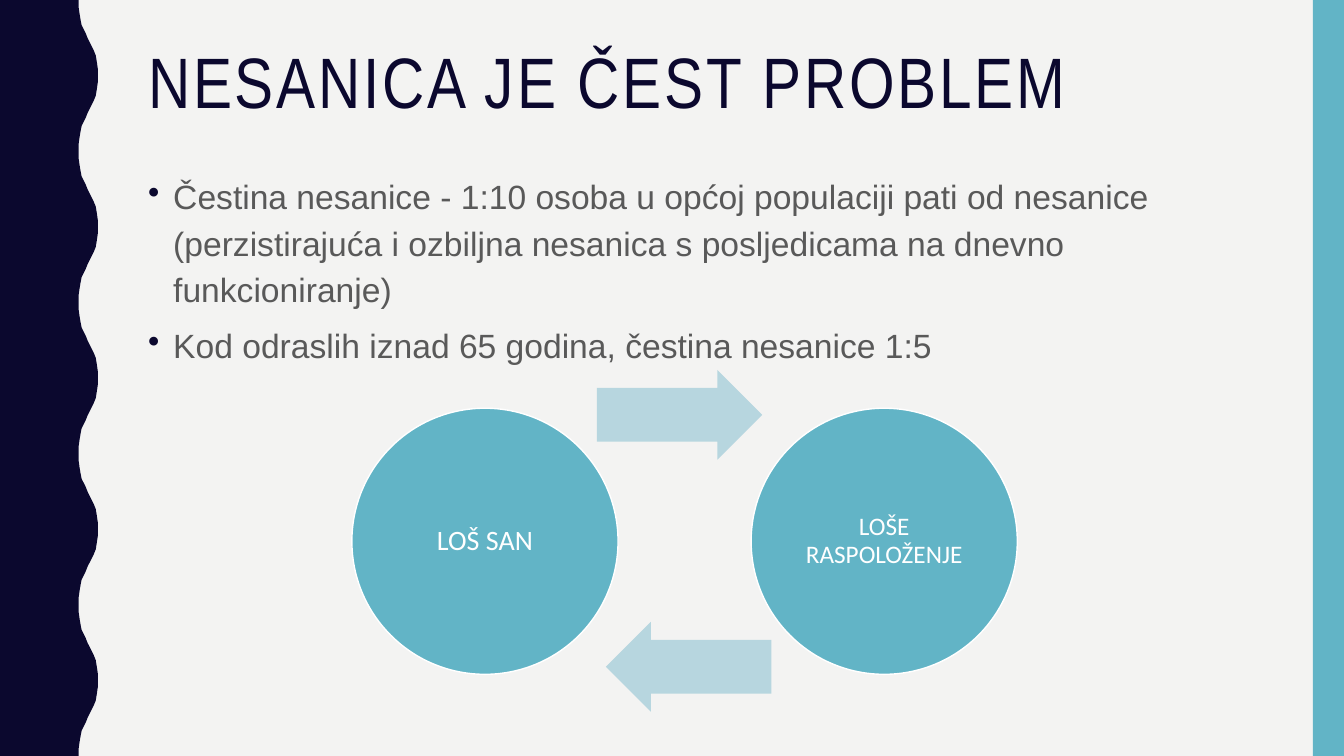
from dataclasses import dataclass

from lxml import etree
from pptx import Presentation, util as u
from pptx.dml.color import RGBColor
from pptx.enum import shapes as sh, text as tx
from pptx.oxml.ns import qn

PX = 9144  # EMU in one px: 100 px to the inch


@dataclass(frozen=True)
class Theme:
    back: str = "F3F3F2"
    navy: str = "0B082E"
    teal: str = "62B4C6"
    pale: str = "B7D6DF"
    gray: str = "595959"
    white: str = "FFFFFF"
    head: int = 51
    body: int = 24
    large: int = 20
    small: int = 18
    title: str = "Arial Narrow"
    sans: str = "Arial"
    label: str = "Calibri"


class Deck:
    def __init__(self, theme, wide, high):
        self.theme = theme
        self.prs = Presentation()
        self.prs.slide_width, self.prs.slide_height = wide * PX, high * PX
        self.slide = self.prs.slides.add_slide(self.prs.slide_layouts[6])
        fill = self.slide.background.fill
        fill.solid()
        fill.fore_color.rgb = RGBColor.from_string(theme.back)

    def paint(self, shape, color, edge=None):
        shape.shadow.inherit = False
        shape.fill.solid()
        shape.fill.fore_color.rgb = RGBColor.from_string(color)
        if edge:
            shape.line.color.rgb = RGBColor.from_string(edge)
            shape.line.width = u.Pt(1)
        else:
            shape.line.fill.background()
        return shape

    def shape(self, kind, box, color, edge=None):
        item = self.slide.shapes.add_shape(kind, *(n * PX for n in box))
        return self.paint(item, color, edge)

    def outline(self, points, color):
        form = self.slide.shapes.build_freeform(*points[0], scale=PX)
        form.add_line_segments(points[1:], close=True)
        return self.paint(form.convert_to_shape(), color)

    def style(self, para, face, size, color, space):
        para.font.name, para.font.size = face, u.Pt(size)
        para.font.color.rgb = RGBColor.from_string(color)
        para.line_spacing = space

    def frame(self, box):
        item = self.slide.shapes.add_textbox(*(n * PX for n in box))
        item.text_frame.word_wrap = True
        return item.text_frame

    def title(self, box, words):
        t = self.theme
        para = self.frame(box).paragraphs[0]
        run = para.add_run()
        run.text = words
        self.style(para, t.title, t.head, t.navy, 0.9)
        run.font._element.set("spc", "200")

    def bullets(self, box, lines):
        t = self.theme
        frame = self.frame(box)
        frame.text = "\n".join(lines)
        for para in frame.paragraphs:
            self.style(para, t.sans, t.body, t.gray, 1.15)
            para.space_before = u.Pt(7)
            props = para._p.get_or_add_pPr()
            props.set("marL", str(25 * PX))
            props.set("indent", str(-25 * PX))
            mark = etree.Element(qn("a:buClr"))
            etree.SubElement(mark, qn("a:srgbClr"), val=t.navy)
            char = etree.Element(qn("a:buChar"), char="•")
            props.find(qn("a:spcBef")).addnext(mark)
            mark.addnext(char)

    def disc(self, left, top, side, words, size):
        t = self.theme
        item = self.shape(sh.MSO_SHAPE.OVAL, (left, top, side, side), t.teal, t.white)
        frame = item.text_frame
        frame.text = words
        frame.word_wrap = True
        frame.vertical_anchor = tx.MSO_ANCHOR.MIDDLE
        frame.margin_left = frame.margin_right = 3 * PX
        frame.margin_top = frame.margin_bottom = 3 * PX
        para = frame.paragraphs[0]
        para.alignment = tx.PP_ALIGN.CENTER
        self.style(para, t.label, size, t.white, 0.9)

    def arrow(self, left, top, turn=0):
        item = self.shape(sh.MSO_SHAPE.RIGHT_ARROW, (left, top, 164, 89), self.theme.pale)
        item.adjustments[0], item.adjustments[1] = 0.6, 0.5
        item.rotation = turn


def wave(high, count):
    """Outline of a left band whose right edge swells count times."""
    rise = [(78, 0), (78, 7), (79, 14), (80, 20), (81, 25), (83, 29), (85, 33), (87, 38),
            (89, 42), (91, 46), (93, 50), (95, 55), (96, 61), (97, 68), (97, 75)]
    step = high // count
    swell = rise + [(x, step - y) for x, y in rise[-2::-1]]
    edge = [(x, y + i * step) for i in range(count) for x, y in swell]
    return [(0, 0), *edge, (0, high)]


def main():
    t = Theme()
    wide, high = 1333, 750
    deck = Deck(t, wide, high)
    deck.outline(wave(high, 5), t.navy)
    deck.shape(sh.MSO_SHAPE.RECTANGLE, (1302, 0, 31, high), t.teal)
    deck.title((137, 42, 1113, 163), "NESANICA JE ČEST PROBLEM")
    deck.bullets((137, 164, 1113, 551), [
        "Čestina nesanice - 1:10 osoba u općoj populaciji pati od nesanice "
        "(perzistirajuća i ozbiljna nesanica s posljedicama na dnevno funkcioniranje)",
        "Kod odraslih iznad 65 godina, čestina nesanice 1:5",
    ])
    deck.disc(349, 405, 264, "LOŠ SAN", t.large)
    deck.arrow(592, 367)
    deck.disc(745, 405, 264, "LOŠE RASPOLOŽENJE", t.small)
    deck.arrow(601, 617, turn=180)
    deck.prs.save("out.pptx")


if __name__ == "__main__":
    main()
